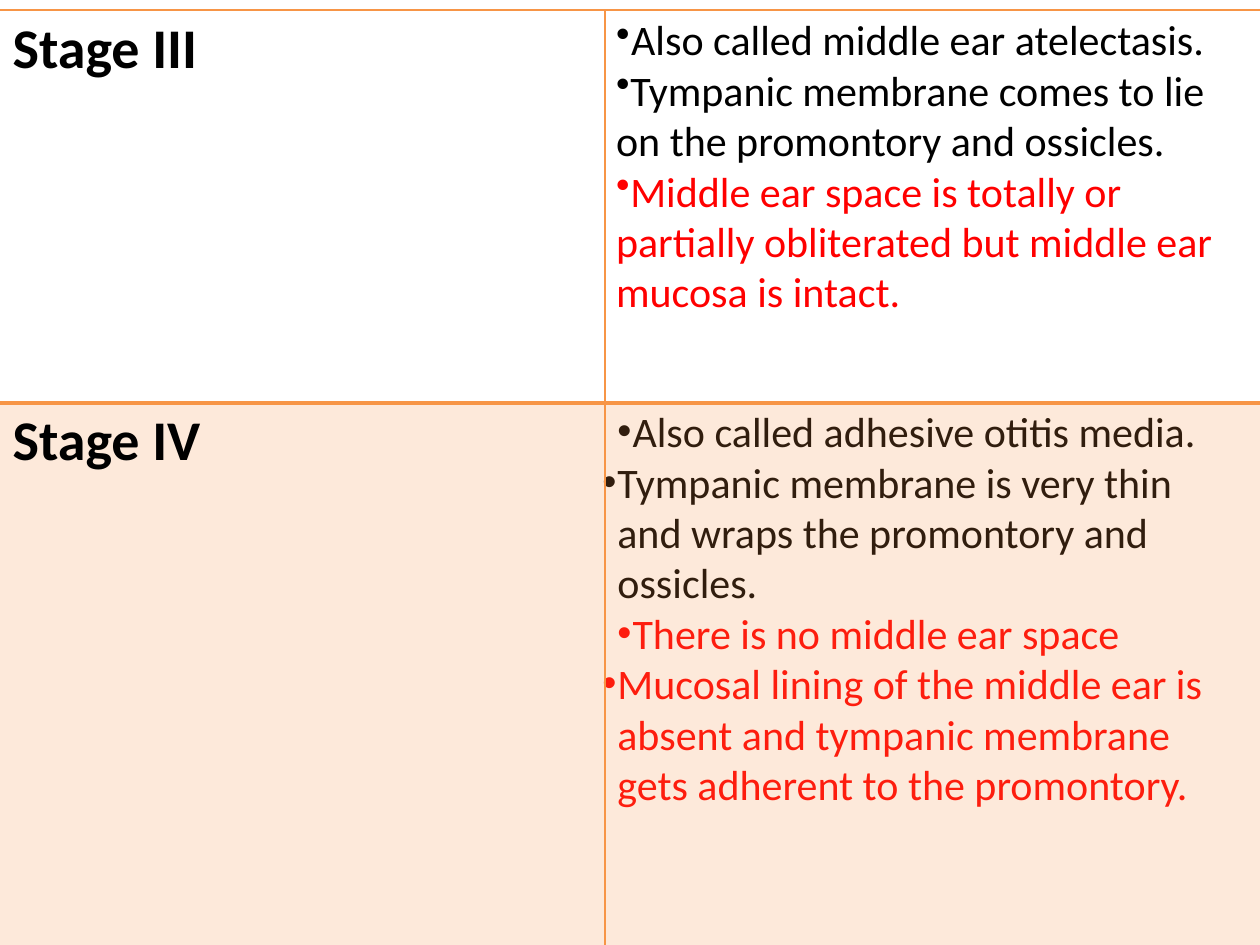
from lxml import etree
from pptx import Presentation
from pptx import util as u
from pptx.dml.color import RGBColor
from pptx.enum import shapes, text
from pptx.oxml import ns

ORANGE = RGBColor(0xF7, 0x95, 0x46)
BLACK = RGBColor(0, 0, 0)
RED = RGBColor(0xFF, 0, 0)

W, H = 10, 7.5
COLUMN, TOP, MIDDLE = 4.8, 0.08, 3.2


class StageSlide:
    """Holds the style and the current slide, and draws its elements."""

    font = "Calibri"
    heading_size = 32
    list_size = 24

    def __init__(self, prs):
        self.s = prs.slides.add_slide(prs.slide_layouts[1])

    def band(self, x, y, w, h):
        sp = self.s.shapes.add_shape(
            shapes.MSO_SHAPE.RECTANGLE, *map(u.Inches, (x, y, w, h)))
        sp.shadow.inherit = False
        sp.fill.solid()
        sp.fill.fore_color.rgb = ORANGE
        color = sp._element.spPr.find(".//" + ns.qn("a:srgbClr"))
        etree.SubElement(color, ns.qn("a:alpha"), val="20000")
        sp.line.fill.background()

    def rule(self, x1, y1, x2, y2, width):
        c = self.s.shapes.add_connector(
            shapes.MSO_CONNECTOR.STRAIGHT, *map(u.Inches, (x1, y1, x2, y2)))
        c.line.color.rgb = ORANGE
        c.line.width = u.Pt(width)
        etree.SubElement(c._element.spPr, ns.qn("a:effectLst"))

    def frame(self, box, sp=None):
        box = [u.Inches(v) for v in box]
        if sp is None:
            sp = self.s.shapes.add_textbox(*box)
        sp.left, sp.top, sp.width, sp.height = box
        tf = sp.text_frame
        tf.word_wrap = True
        tf.auto_size = text.MSO_AUTO_SIZE.SHAPE_TO_FIT_TEXT
        tf.vertical_anchor = text.MSO_ANCHOR.TOP
        tf.margin_left = tf.margin_right = tf.margin_bottom = 0
        tf.margin_top = u.Inches(0.01)
        return tf

    def run(self, p, words, size, color, bold=False):
        r = p.add_run()
        r.text = words
        r.font.name = self.font
        r.font.size = u.Pt(size)
        r.font.bold = bold
        r.font.color.rgb = color

    def heading(self, words, box, sp=None):
        p = self.frame(box, sp).paragraphs[0]
        p.alignment = text.PP_ALIGN.LEFT
        p.space_before = u.Pt(1.1)
        p._p.get_or_add_pPr().set("marL", str(u.Inches(0.01)))
        self.run(p, words, self.heading_size, BLACK, True)

    def bullets(self, items, box, sp=None):
        tf = self.frame(box, sp)
        for i, (words, color, margin, indent) in enumerate(items):
            p = tf.add_paragraph() if i else tf.paragraphs[0]
            p.alignment = text.PP_ALIGN.LEFT
            p.space_before = u.Pt(0 if i else 1)
            pPr = p._p.get_or_add_pPr()
            pPr.set("marL", str(u.Inches(margin)))
            pPr.set("indent", str(u.Inches(indent)))
            etree.SubElement(pPr, ns.qn("a:buSzPct"), val="96000")
            etree.SubElement(pPr, ns.qn("a:buChar"), char="•")
            self.run(p, words, self.list_size, color)


def main():
    prs = Presentation()
    prs.slide_width, prs.slide_height = u.Inches(W), u.Inches(H)
    slide = StageSlide(prs)
    title, body = slide.s.placeholders

    for x, w in ((0, COLUMN), (COLUMN, W - COLUMN)):
        slide.band(x, MIDDLE, w, H - MIDDLE)
    slide.rule(COLUMN, TOP, COLUMN, H, 1)
    slide.rule(0, MIDDLE, W, MIDDLE, 2)
    slide.rule(0, TOP, W, TOP, 1)

    slide.heading("Stage III", (0.09, 0.09, 1.52, 0.56), title)
    slide.bullets([
        ("Also called middle ear atelectasis.", BLACK, 0.13, -0.12),
        ("Tympanic membrane comes to lie on the promontory and ossicles.",
         BLACK, 0.01, 0),
        ("Middle ear space is totally or partially obliterated but "
         "middle ear mucosa is intact.", RED, 0.01, 0),
    ], (4.88, 0.1, 4.76, 2.43))

    slide.heading("Stage IV", (0.09, MIDDLE, 1.52, 0.56))
    slide.bullets([
        ("Also called adhesive otitis media.", BLACK, 4.69, -0.12),
        ("Tympanic membrane is very thin and wraps the promontory and "
         "ossicles.", BLACK, 4.57, -0.12),
        ("There is no middle ear space", RED, 4.69, -0.12),
        ("Mucosal lining of the middle ear is absent and tympanic membrane "
         "gets adherent to the promontory.", RED, 4.57, -0.12),
    ], (0.33, 3.21, 9.34, 3.23), body)

    prs.save("out.pptx")


if __name__ == "__main__":
    main()
